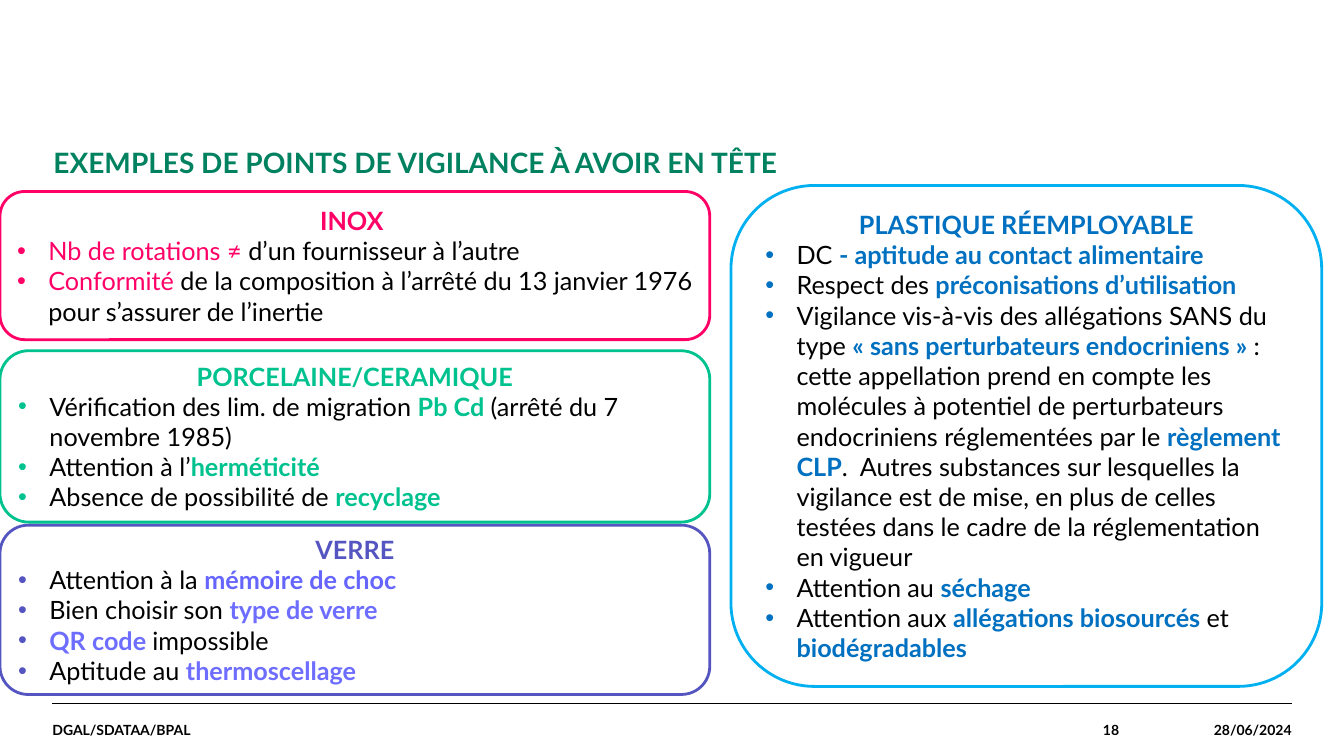
from lxml import etree
from pptx import Presentation
from pptx import util as u
from pptx.dml.color import RGBColor
from pptx.enum import shapes, text
from pptx.oxml import ns

PX = 9144
FONT = "Lato"
COLORS = {
    "black": "000000",
    "white": "FFFFFF",
    "heading": "008260",
    "pink": "FF0066",
    "green": "00C28F",
    "violet": "5555C1",
    "lilac": "6666FF",
    "lavender": "6D6DFF",
    "sky": "00B0F0",
    "blue": "0070C0",
}
HANGING = 31
LEFT, RIGHT = text.PP_ALIGN.LEFT, text.PP_ALIGN.RIGHT
TOP, MIDDLE = text.MSO_ANCHOR.TOP, text.MSO_ANCHOR.MIDDLE

INOX = [
    [("Nb de rotations ≠ ", "pink", False), ("d’un fournisseur à l’autre",)],
    [("Conformité", "pink", False),
     (" de la composition à l’arrêté du 13 janvier 1976 pour s’assurer de l’inertie",)],
]
PORCELAINE = [
    [("Vérification des lim. de migration ",), ("Pb Cd ", "green"),
     ("(arrêté du 7 novembre 1985)",)],
    [("Attention à l’",), ("herméticité", "green")],
    [("Absence de possibilité de ",), ("recyclage", "green")],
]
VERRE = [
    [("Attention à la ",), ("mémoire de choc", "lilac")],
    [("Bien choisir son ",), ("type de verre", "lavender")],
    [("QR code ", "lavender"), ("impossible",)],
    [("Aptitude au ",), ("thermoscellage", "lavender")],
]
PLASTIQUE = [
    [("DC ",), ("- aptitude au contact alimentaire", "blue")],
    [("Respect des ",), ("préconisations d’utilisation", "blue")],
    [("Vigilance vis-à-vis des allégations SANS du type ",),
     ("« sans perturbateurs endocriniens » ", "blue"),
     (": cette appellation prend en compte les molécules à potentiel de "
      "perturbateurs endocriniens réglementées par le ",),
     ("règlement CLP", "blue"),
     (".  Autres substances sur lesquelles la vigilance est de mise, en plus de "
      "celles testées dans le cadre de la réglementation en vigueur",)],
    [("Attention au ",), ("séchage", "blue")],
    [("Attention aux ",), ("allégations biosourcés ", "blue"), ("et ",),
     ("biodégradables", "blue")],
]


def px(*lengths):
    return [u.Emu(length * PX) for length in lengths]


def rgb(name):
    return RGBColor.from_string(COLORS[name])


def style_run(run, size, color, bold):
    run.font.name = FONT
    run.font.size = u.Pt(size)
    run.font.bold = bold
    run.font.color.rgb = rgb(color)


def add_label(slide, box, words, size, color="black", align=LEFT, anchor=MIDDLE):
    frame = slide.shapes.add_textbox(*px(*box)).text_frame
    frame.word_wrap = True
    frame.vertical_anchor = anchor
    frame.margin_left = frame.margin_right = frame.margin_top = frame.margin_bottom = 0
    frame.text = words
    line = frame.paragraphs[0]
    line.alignment = align
    style_run(line.runs[0], size, color, True)


def add_bullet(paragraph, color):
    props = paragraph._p.get_or_add_pPr()
    props.set("marL", str(HANGING * PX))
    props.set("indent", str(-HANGING * PX))
    tint = etree.SubElement(props, ns.qn("a:buClr"))
    etree.SubElement(tint, ns.qn("a:srgbClr"), val=COLORS[color])
    etree.SubElement(props, ns.qn("a:buFont"), typeface="Arial")
    etree.SubElement(props, ns.qn("a:buChar"), char="•")


def add_card(slide, box, heading, points, accent, border):
    card = slide.shapes.add_shape(shapes.MSO_SHAPE.ROUNDED_RECTANGLE, *px(*box))
    card.shadow.inherit = False
    card.fill.solid()
    card.fill.fore_color.rgb = rgb("white")
    card.line.color.rgb = rgb(border)
    card.line.width = u.Pt(2)
    frame = card.text_frame
    frame.word_wrap = True
    frame.vertical_anchor = MIDDLE
    frame.text = heading
    frame.paragraphs[0].alignment = text.PP_ALIGN.CENTER
    style_run(frame.paragraphs[0].runs[0], 18, accent, True)
    for point in points:
        paragraph = frame.add_paragraph()
        paragraph.alignment = LEFT
        add_bullet(paragraph, accent)
        for words, *look in point:
            run = paragraph.add_run()
            run.text = words
            color, bold = (look + [True])[:2] if look else ("black", False)
            style_run(run, 18, color, bold)


def add_rule(slide, left, right, y):
    rule = slide.shapes.add_connector(
        shapes.MSO_CONNECTOR.STRAIGHT, *px(left, y, right, y))
    rule.line.color.rgb = rgb("black")
    rule.line.width = u.Pt(0.8)
    etree.SubElement(rule._element.spPr, ns.qn("a:effectLst"))


def main():
    deck = Presentation()
    deck.slide_width, deck.slide_height = px(1333, 750)
    slide = deck.slides.add_slide(deck.slide_layouts[6])

    add_rule(slide, 52, 1281, 698)
    add_label(slide, (52, 698, 861, 52), "DGAL/SDATAA/BPAL", 10)
    add_label(slide, (913, 698, 197, 52), "18", 10, align=RIGHT)
    add_label(slide, (1110, 698, 171, 52), "28/06/2024", 10, align=RIGHT)
    add_label(slide, (53, 144, 1142, 49),
              "EXEMPLES DE POINTS DE VIGILANCE À AVOIR EN TÊTE", 20, "heading", anchor=TOP)

    add_card(slide, (0, 190, 704, 147), "INOX ", INOX, "pink", "pink")
    add_card(slide, (0, 521, 704, 168), "VERRE", VERRE, "violet", "violet")
    add_card(slide, (0, 348, 704, 170), "PORCELAINE/CERAMIQUE", PORCELAINE, "green", "green")
    add_card(slide, (725, 184, 586, 497), "PLASTIQUE RÉEMPLOYABLE", PLASTIQUE, "blue", "sky")

    deck.save("out.pptx")


if __name__ == "__main__":
    main()
